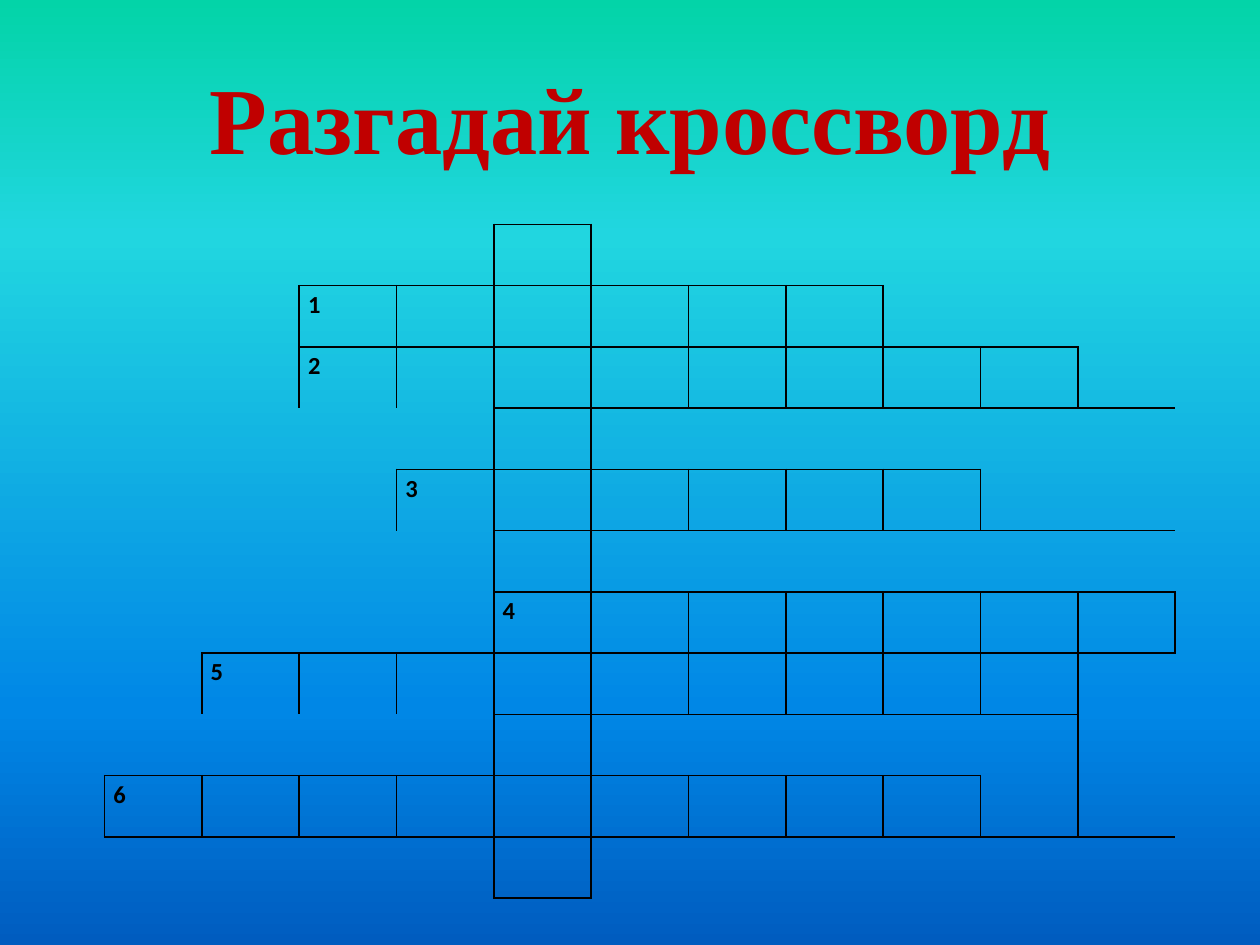
from copy import deepcopy

from lxml.etree import SubElement as Sub
from pptx import Presentation
from pptx.dml.color import RGBColor as RGB
from pptx.enum.text import MSO_ANCHOR as Anchor, PP_ALIGN as Align
from pptx.oxml.ns import qn
from pptx.util import Inches, Pt

RED = RGB(0xC0, 0x00, 0x00)
BLACK = RGB(0x00, 0x00, 0x00)
STOPS = [
    (0, RGB(0x03, 0xD4, 0xA8)),
    (25, RGB(0x21, 0xD6, 0xE0)),
    (75, RGB(0x00, 0x87, 0xE6)),
    (100, RGB(0x00, 0x5C, 0xBF)),
]
NO_STYLE = "{2D5ABB26-0587-4C30-8999-92F81FD0307C}"
SIZE = 11
ROWS = [
    (4, 1, "", "R", "LB"),
    (2, 6, "1", "R", "LB"),
    (2, 8, "2", "R", "L"),
    (4, 1, "", "R", "LTB"),
    (3, 6, "3", "R", "L"),
    (4, 1, "", "R", "LTB"),
    (4, 7, "4", "R", ""),
    (1, 9, "5", "R", "LTB"),
    (4, 1, "", "RB", "LTB"),
    (0, 9, "6", "", "L"),
    (4, 1, "", "RT", "LT"),
]
TALL_ROW, TALL_SPAN = 7, 3


class Deck:
    def __init__(self):
        self.file = Presentation()
        self.file.slide_width = Inches(10)
        self.file.slide_height = Inches(7.5)
        self.slide = self.file.slides.add_slide(self.file.slide_layouts[5])

    def paint(self, stops):
        fill = self.slide.background.fill
        fill.gradient()
        fill.gradient_angle = 270
        group = next(self.slide.element.iter(qn("a:gsLst")))
        first = group[0]
        for _ in stops[2:]:
            group.append(deepcopy(first))
        for stop, (place, color) in zip(fill.gradient_stops, stops):
            stop.position = place / 100
            stop.color.rgb = color

    def add_run(self, para, text, font, size, color):
        run = para.add_run()
        run.text = text
        run.font.name = font
        run.font.size = Pt(size)
        run.font.bold = True
        run.font.color.rgb = color

    def title(self, text):
        box = self.slide.shapes.title
        box.left, box.top = Inches(0.5), Inches(0.3)
        box.width, box.height = Inches(9), Inches(1.25)
        frame = box.text_frame
        frame.vertical_anchor = Anchor.MIDDLE
        para = frame.paragraphs[0]
        para.alignment = Align.CENTER
        self.add_run(para, text, "Times New Roman", 54, RED)

    def edge(self, cell, sides):
        props = cell._tc.get_or_add_tcPr()
        for side in "LRTB":
            line = Sub(props, qn("a:ln" + side), w=str(Pt(1)))
            if side in sides:
                fill = Sub(line, qn("a:solidFill"))
                Sub(fill, qn("a:srgbClr"), val=str(BLACK))
            else:
                Sub(line, qn("a:noFill"))
        cell.fill.background()

    def blank(self, grid, row, start, end, sides, span=1):
        if start >= end:
            return
        cell = grid.cell(row, start)
        if end - start > 1 or span > 1:
            cell.merge(grid.cell(row + span - 1, end - 1))
        self.edge(cell, sides)

    def word(self, grid, row, start, end, mark):
        for col in range(start, end):
            self.edge(grid.cell(row, col), "LRTB")
        if mark:
            cell = grid.cell(row, start)
            cell.margin_left = cell.margin_right = Inches(0.07)
            cell.margin_top = cell.margin_bottom = 0
            para = cell.text_frame.paragraphs[0]
            para.line_spacing = 1.15
            self.add_run(para, mark, "Calibri", 14, BLACK)

    def puzzle(self, rows):
        shape = self.slide.shapes.add_table(
            SIZE, SIZE, Inches(0.83), Inches(1.78), Inches(8.5), Inches(5.35))
        grid = shape.table
        grid.first_row = grid.horz_banding = False
        next(shape.element.iter(qn("a:tableStyleId"))).text = NO_STYLE
        for row, (start, count, mark, left, right) in enumerate(rows):
            end = start + count
            below = TALL_ROW < row < TALL_ROW + TALL_SPAN
            last = SIZE - 1 if below else SIZE
            span = TALL_SPAN if row == TALL_ROW else 1
            self.blank(grid, row, 0, start, left)
            self.word(grid, row, start, end, mark)
            self.blank(grid, row, end, last, right, span)


def main():
    deck = Deck()
    deck.paint(STOPS)
    deck.title("Разгадай кроссворд")
    deck.puzzle(ROWS)
    deck.file.save("out.pptx")


if __name__ == "__main__":
    main()
